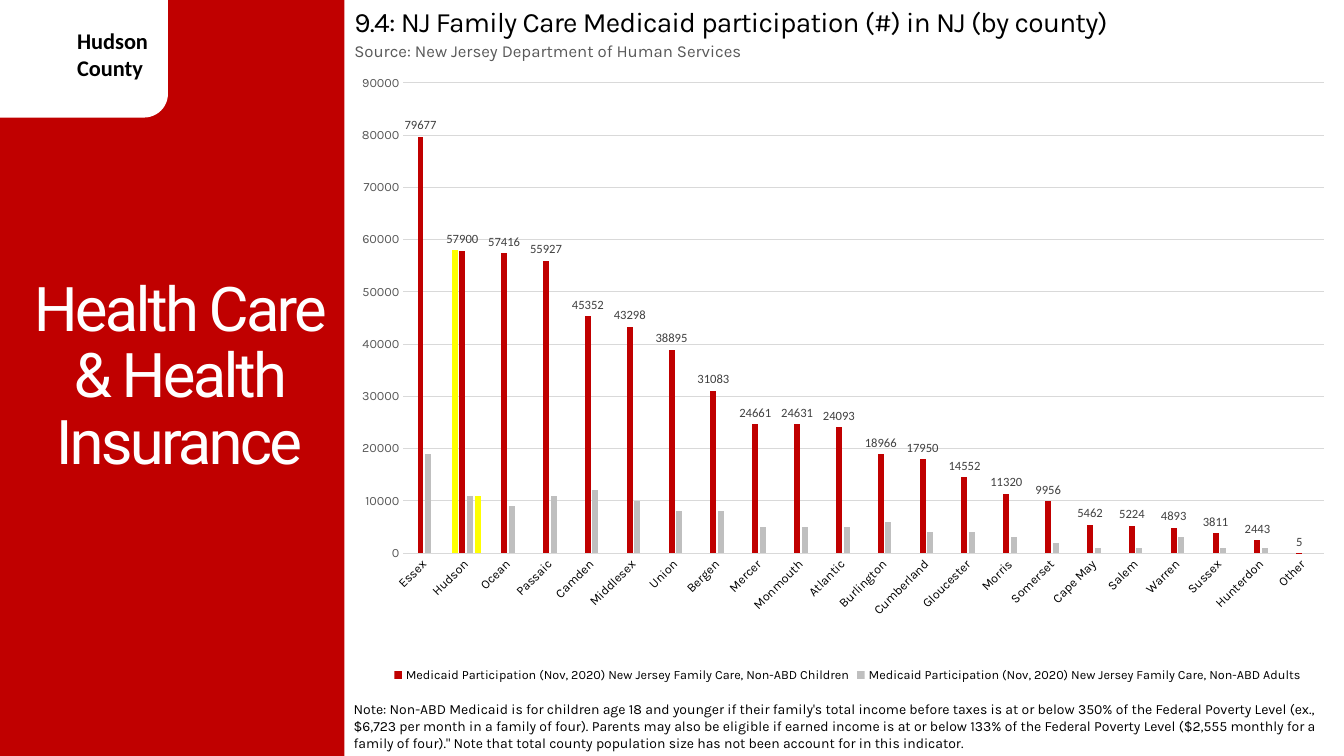
from dataclasses import dataclass, field
from typing import Any, NamedTuple, Optional

from lxml import etree
from pptx import Presentation
from pptx import util as u
from pptx.chart import data as chart_data
from pptx.dml import color
from pptx.enum import chart as ch
from pptx.enum import shapes, text
from pptx.oxml import ns

COLUMNS, ROWS = 160, 90
CELL = u.Inches(1) / 12


class Area(NamedTuple):
    column: float
    row: float
    columns: float
    rows: float

    def lengths(self) -> list[int]:
        return [u.Emu(round(value * CELL)) for value in self]


@dataclass(frozen=True)
class Theme:
    red: str = "C00000"
    white: str = "FFFFFF"
    black: str = "000000"
    highlight: str = "FFFF00"
    adults: str = "BFBFBF"
    grid: str = "D9D9D9"
    muted: str = "595959"
    value: str = "404040"
    topic_size: float = 44
    heading_size: float = 20
    county_size: float = 16
    source_size: float = 12
    note_size: float = 10
    chart_size: float = 9
    body_font: str = "Karla"
    topic_font: str = "Roboto"
    label_font: str = "Calibri"


THEME = Theme()


@dataclass(frozen=True)
class Block:
    area: Area
    fill: str
    preset: Any


@dataclass(frozen=True)
class Caption:
    area: Area
    words: str
    size: float
    ink: str = THEME.black
    face: str = THEME.body_font
    bold: bool = False
    spacing: float = 0
    frame: dict[str, Any] = field(default_factory=dict)
    paragraph: dict[str, Any] = field(default_factory=dict)


@dataclass(frozen=True)
class Bars:
    name: str
    values: list[Optional[float]]
    fill: str
    labelled: bool = False
    in_legend: bool = True


BLOCKS = [
    Block(Area(0, 0, 41, 90), THEME.red, shapes.MSO_SHAPE.RECTANGLE),
    Block(Area(-4, -3, 24, 17), THEME.white, shapes.MSO_SHAPE.ROUNDED_RECTANGLE),
]

CAPTIONS = [
    Caption(Area(8, 2.64, 11.64, 7.68), "Hudson County", THEME.county_size,
            face=THEME.label_font, bold=True),
    Caption(Area(0, 9, 42.6, 72), "Health Care & Health Insurance", THEME.topic_size,
            ink=THEME.white, face=THEME.topic_font, spacing=-2,
            frame={"vertical_anchor": text.MSO_ANCHOR.MIDDLE,
                   "auto_size": text.MSO_AUTO_SIZE.NONE},
            paragraph={"alignment": text.PP_ALIGN.CENTER, "line_spacing": 0.9}),
    Caption(Area(41, 4.32, 110.28, 3.6), "Source: New Jersey Department of Human Services",
            THEME.source_size, ink=THEME.muted),
    Caption(Area(41, 0, 118.32, 5.28),
            "9.4: NJ Family Care Medicaid participation (#) in NJ (by county)",
            THEME.heading_size, spacing=-0.5),
    Caption(Area(40.92, 82.8, 118.56, 7.32),
            "Note: Non-ABD Medicaid is for children age 18 and younger if their family's total "
            "income before taxes is at or below 350% of the Federal Poverty Level (ex., $6,723 "
            "per month in a family of four). Parents may also be eligible if earned income is at "
            "or below 133% of the Federal Poverty Level ($2,555 monthly for a family of four).\" "
            "Note that total county population size has not been account for in this indicator.",
            THEME.note_size),
]

CHART_AREA = Area(41.76, 9, 118.24, 72.72)
PLOT_SHARES = {"x": 0.053, "y": 0.012, "w": 0.927, "h": 0.77}
COUNTIES = ["Essex", "Hudson", "Ocean", "Passaic", "Camden", "Middlesex", "Union", "Bergen",
            "Mercer", "Monmouth", "Atlantic", "Burlington", "Cumberland", "Gloucester", "Morris",
            "Somerset", "Cape May", "Salem", "Warren", "Sussex", "Hunterdon", "Other"]
CHILDREN = [79677, 57900, 57416, 55927, 45352, 43298, 38895, 31083, 24661, 24631, 24093,
            18966, 17950, 14552, 11320, 9956, 5462, 5224, 4893, 3811, 2443, 5]
ADULTS = [19000, 11000, 9000, 11000, 12000, 10000, 8000, 8000, 5000, 5000, 5000,
          6000, 4000, 4000, 3000, 2000, 1000, 1000, 3000, 1000, 1000, 0]
PROGRAM = "Medicaid Participation (Nov, 2020) New Jersey Family Care, Non-ABD"


def hudson_only(value: float) -> list[Optional[float]]:
    return [value if county == "Hudson" else None for county in COUNTIES]


SERIES = [
    Bars("Series 1", hudson_only(58000), THEME.highlight, in_legend=False),
    Bars(f"{PROGRAM} Children", CHILDREN, THEME.red, labelled=True),
    Bars(f"{PROGRAM} Adults", ADULTS, THEME.adults),
    Bars("Series 4", hudson_only(11000), THEME.highlight, in_legend=False),
]


def apply(target: Any, formats: dict[str, Any]) -> None:
    for name, value in formats.items():
        setattr(target, name, value)


def style_font(font: Any, size: float, ink: str, face: str, bold: bool = False) -> None:
    apply(font, {"size": u.Pt(size), "name": face, "bold": bold})
    font.color.rgb = color.RGBColor.from_string(ink)


def paint(fill: Any, ink: str) -> None:
    fill.solid()
    fill.fore_color.rgb = color.RGBColor.from_string(ink)


def draw_block(slide: Any, block: Block) -> None:
    panel = slide.shapes.add_shape(block.preset, *block.area.lengths())
    panel.shadow.inherit = False
    paint(panel.fill, block.fill)
    panel.line.fill.background()


def draw_caption(slide: Any, caption: Caption) -> None:
    frame = slide.shapes.add_textbox(*caption.area.lengths()).text_frame
    apply(frame, {"word_wrap": True, "auto_size": text.MSO_AUTO_SIZE.SHAPE_TO_FIT_TEXT}
          | caption.frame)
    paragraph = frame.paragraphs[0]
    apply(paragraph, caption.paragraph)
    run = paragraph.add_run()
    run.text = caption.words
    style_font(run.font, caption.size, caption.ink, caption.face, caption.bold)
    if caption.spacing:
        run.font._element.set("spc", str(round(caption.spacing * 100)))


def add_element(parent: Any, tag: str, **attributes: str) -> Any:
    return etree.SubElement(parent, ns.qn(tag), attributes)


def place_plot(chart: Any) -> None:
    plot_area = chart._chartSpace.chart.plotArea
    for layout in plot_area.findall(ns.qn("c:layout")):
        plot_area.remove(layout)
    layout = etree.Element(ns.qn("c:layout"))
    manual = add_element(layout, "c:manualLayout")
    add_element(manual, "c:layoutTarget", val="inner")
    for side in ("x", "y"):
        add_element(manual, f"c:{side}Mode", val="edge")
    for side, share in PLOT_SHARES.items():
        add_element(manual, f"c:{side}", val=str(share))
    plot_area.insert(0, layout)


def style_legend(chart: Any) -> None:
    chart.has_legend = True
    legend = chart.legend
    apply(legend, {"position": ch.XL_LEGEND_POSITION.BOTTOM, "include_in_layout": False})
    style_font(legend.font, THEME.chart_size, THEME.black, THEME.body_font)
    hidden = [index for index, bars in enumerate(SERIES) if not bars.in_legend]
    for position, index in enumerate(hidden, start=1):
        entry = etree.Element(ns.qn("c:legendEntry"))
        add_element(entry, "c:idx", val=str(index))
        add_element(entry, "c:delete", val="1")
        legend._element.insert(position, entry)


def style_axes(chart: Any) -> None:
    counties, people = chart.category_axis, chart.value_axis
    for axis, ink in ((counties, THEME.black), (people, THEME.muted)):
        apply(axis, {"major_tick_mark": ch.XL_TICK_MARK.NONE,
                     "minor_tick_mark": ch.XL_TICK_MARK.NONE})
        style_font(axis.tick_labels.font, THEME.chart_size, ink, THEME.body_font)
    apply(people, {"minimum_scale": 0, "maximum_scale": 90000, "major_unit": 10000,
                   "has_major_gridlines": True})
    people.format.line.fill.background()
    for line in (counties.format.line, people.major_gridlines.format.line):
        paint(line.fill, THEME.grid)
        line.width = u.Pt(0.75)
    slant = counties._element.find(f"{ns.qn('c:txPr')}/{ns.qn('a:bodyPr')}")
    apply_slant = {"rot": "-2700000", "vert": "horz"}
    for name, value in apply_slant.items():
        slant.set(name, value)


def draw_chart(slide: Any) -> None:
    participation = chart_data.CategoryChartData(number_format="General")
    participation.categories = COUNTIES
    for bars in SERIES:
        participation.add_series(bars.name, bars.values)
    chart = slide.shapes.add_chart(ch.XL_CHART_TYPE.COLUMN_CLUSTERED,
                                   *CHART_AREA.lengths(), participation).chart
    chart.has_title = False
    style_font(chart.font, THEME.note_size, THEME.black, THEME.label_font)
    plot = chart.plots[0]
    apply(plot, {"gap_width": 219, "overlap": -27, "vary_by_categories": False})
    for bars, series in zip(SERIES, plot.series):
        paint(series.format.fill, bars.fill)
        series.invert_if_negative = False
        if bars.labelled:
            labels = series.data_labels
            apply(labels, {"show_value": True, "position": ch.XL_LABEL_POSITION.OUTSIDE_END})
            style_font(labels.font, THEME.chart_size, THEME.value, THEME.label_font)
    style_axes(chart)
    style_legend(chart)
    place_plot(chart)


def main() -> None:
    deck = Presentation()
    apply(deck, {"slide_width": round(COLUMNS * CELL), "slide_height": round(ROWS * CELL)})
    slide = deck.slides.add_slide(deck.slide_layouts[6])
    paint(slide.background.fill, THEME.white)
    for block in BLOCKS:
        draw_block(slide, block)
    for caption in CAPTIONS:
        draw_caption(slide, caption)
    draw_chart(slide)
    deck.save("out.pptx")


if __name__ == "__main__":
    main()
